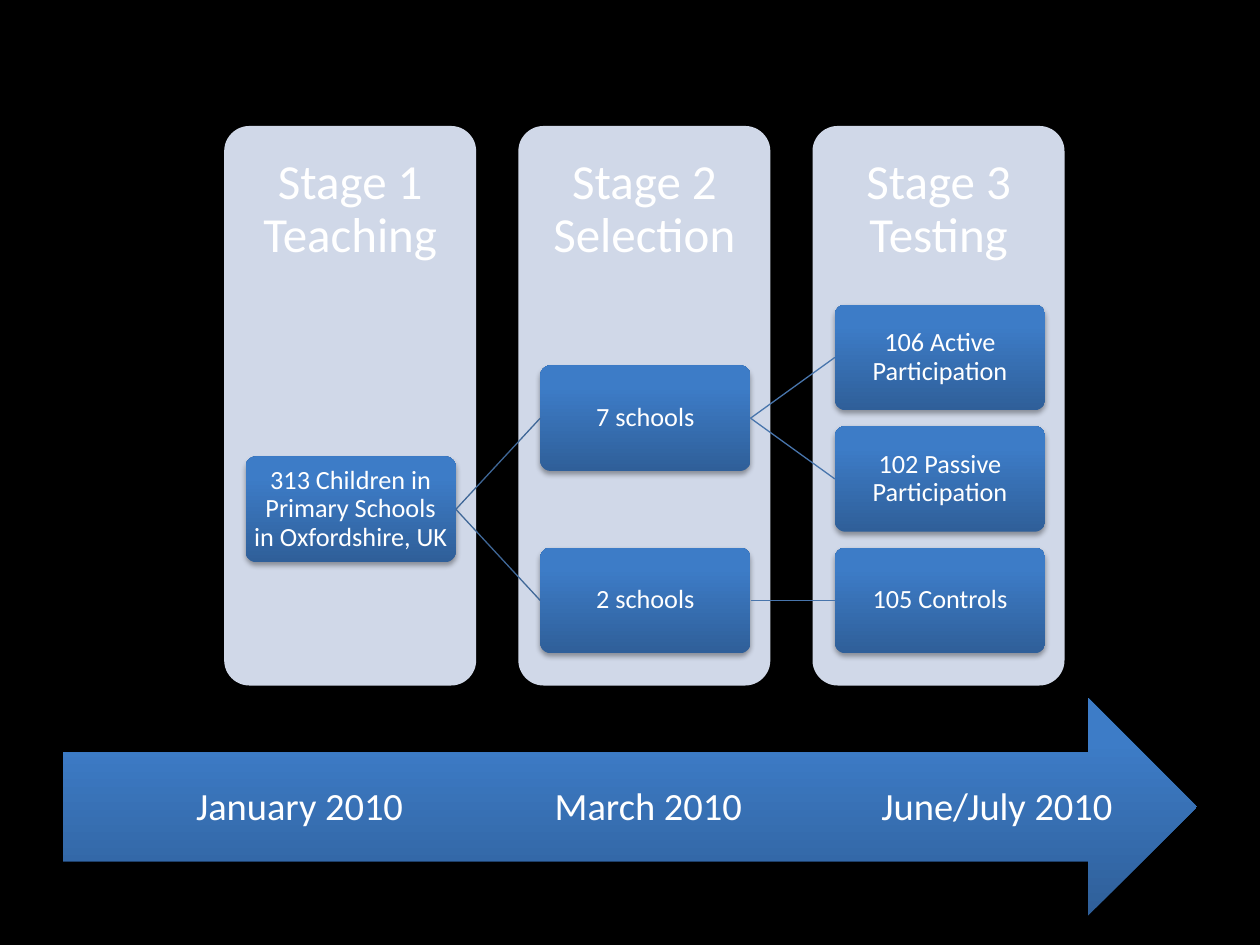
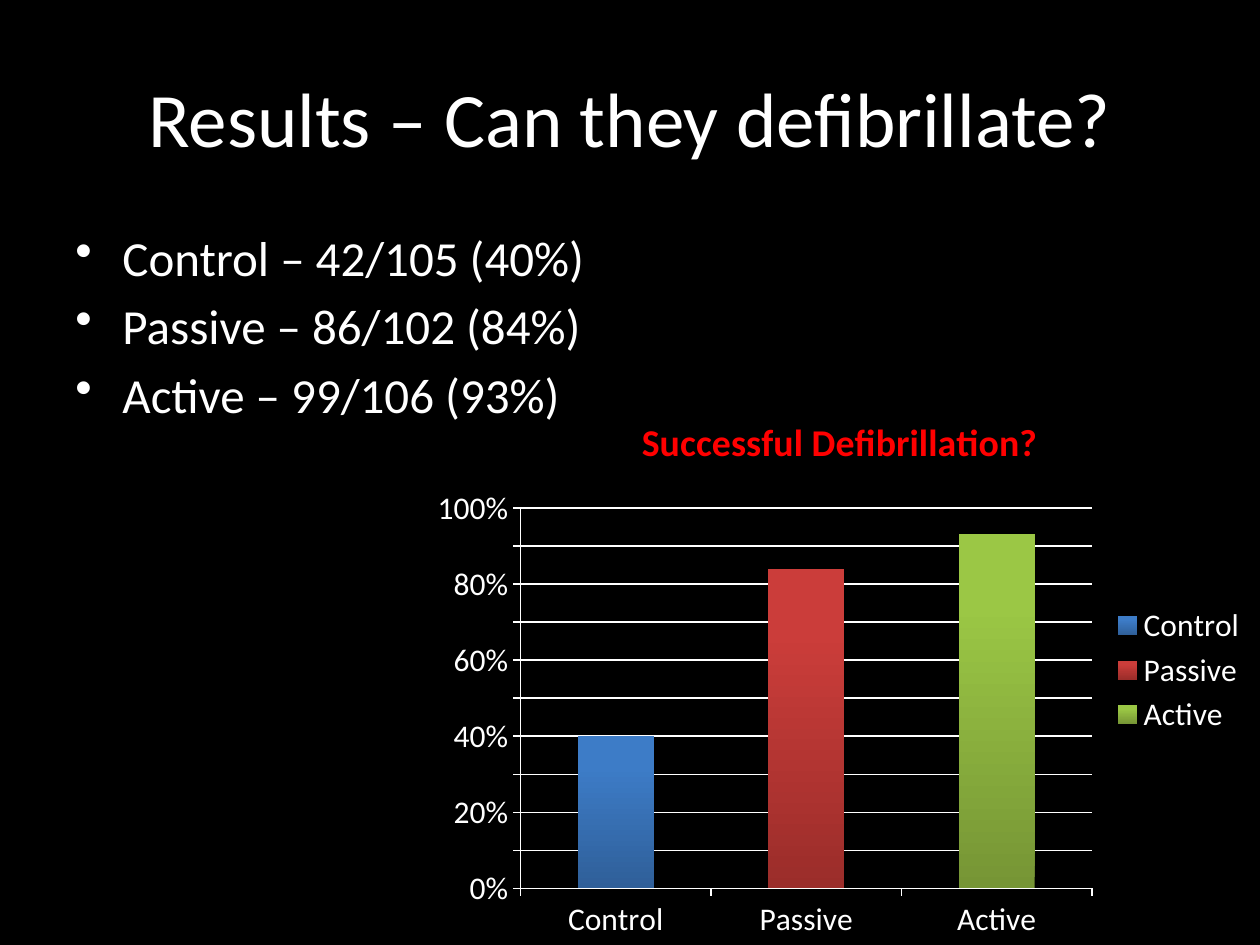
from dataclasses import dataclass

from lxml import etree
from pptx import Presentation
from pptx.chart.data import CategoryChartData
from pptx.dml.color import RGBColor
from pptx.enum import chart as charts, shapes, text
from pptx.oxml import parse_xml
from pptx.oxml import ns
from pptx.util import Cm, Pt


@dataclass(frozen=True)
class Theme:
    font: str = "Calibri"
    back: str = "000000"
    ink: str = "FFFFFF"
    panel: str = "D0D8E8"
    alert: str = "FF0000"
    links: tuple = ("3F6797", "4875AC")
    # Gradients run from the bottom colour to the top colour
    blue: tuple = ("2F5F99", "3D7CC7")
    red: tuple = ("9B2D2A", "CB3D3A")
    green: tuple = ("769535", "9BC745")
    title: float = 44
    head: float = 28
    month: float = 22
    node: float = 15
    chart: float = 18
    label: float = 21.6


T = Theme()
KIND = shapes.MSO_SHAPE
MID = text.MSO_ANCHOR.MIDDLE
TOP = text.MSO_ANCHOR.TOP
CENTRE = text.PP_ALIGN.CENTER
LEFT = text.PP_ALIGN.LEFT


def rgb(code):
    return RGBColor.from_string(code)


def box(left, top, width, height):
    return Cm(left), Cm(top), Cm(width), Cm(height)


def blend(fill, pair):
    fill.gradient()
    fill.gradient_angle = 90
    for stop, code, place in zip(fill.gradient_stops, pair, (0, 0.8)):
        stop.color.rgb = rgb(code)
        stop.position = place


def style(font, size, color=T.ink, bold=False):
    font.name, font.size, font.bold = T.font, Pt(size), bold
    font.color.rgb = rgb(color)


def write(shape, *lines, size, align=CENTRE, anchor=MID, inset=(0.25, 0.13),
          space=1.0, bullet=False):
    """Fill a shape or text box with one paragraph per line."""
    frame = shape.text_frame
    frame.word_wrap, frame.vertical_anchor = True, anchor
    frame.margin_left = frame.margin_right = Cm(inset[0])
    frame.margin_top = frame.margin_bottom = Cm(inset[1])
    for i, line in enumerate(lines):
        para = frame.add_paragraph() if i else frame.paragraphs[0]
        para.alignment, para.line_spacing = align, space
        run = para.add_run()
        run.text = line
        style(run.font, size)
        if bullet:
            para.space_before = Pt(size * 0.2)
            props = para._p.get_or_add_pPr()
            props.set("marL", str(Cm(0.95)))
            props.set("indent", str(-Cm(0.95)))
            etree.SubElement(props, ns.qn("a:buChar")).set("char", "•")


def label(slide, place, *lines, **form):
    write(slide.shapes.add_textbox(*box(*place)), *lines, **form)


def block(slide, kind, place, fill):
    """Add a shape with a plain or blended fill and a soft shadow."""
    shape = slide.shapes.add_shape(kind, *box(*place))
    if kind == KIND.ROUNDED_RECTANGLE:
        shape.adjustments[0] = 0.1
    if isinstance(fill, tuple):
        blend(shape.fill, fill)
    else:
        shape.fill.solid()
        shape.fill.fore_color.rgb = rgb(fill)
    shape.line.fill.background()
    shape.shadow.inherit = False
    shade = parse_xml(
        f'<a:outerShdw {ns.nsdecls("a")} blurRad="{Pt(3.1)}" dist="{Pt(1.8)}" '
        'dir="5400000" rotWithShape="0"><a:srgbClr val="000000">'
        '<a:alpha val="35000"/></a:srgbClr></a:outerShdw>')
    shape._element.spPr.find(ns.qn("a:effectLst")).append(shade)
    return shape


def node(slide, words, col, row):
    place = (4.95 + 5.94 * col, 6.14 + 2.45 * row, 4.24, 2.13)
    shape = block(slide, KIND.ROUNDED_RECTANGLE, place, T.blue)
    write(shape, words, size=T.node, inset=(0.1, 0.1), space=0.9)
    return shape


def link(slide, start, end, color):
    line = slide.shapes.add_connector(shapes.MSO_CONNECTOR.STRAIGHT, 0, 0, 0, 0)
    line.begin_connect(start, 3)
    line.end_connect(end, 1)
    line.line.color.rgb, line.line.width = rgb(color), Pt(0.75)
    etree.SubElement(line._element.spPr, ns.qn("a:effectLst"))


def page(deck):
    slide = deck.slides.add_slide(deck.slide_layouts[6])
    slide.background.fill.solid()
    slide.background.fill.fore_color.rgb = rgb(T.back)
    return slide


def study(deck):
    slide = page(deck)
    # Timeline
    block(slide, KIND.RIGHT_ARROW, (1.27, 14.07, 22.86, 4.39), T.blue)
    for i, month in enumerate(("January 2010", "March 2010", "June/July 2010")):
        label(slide, (3.12 + 7.03 * i, 15.19, 5.84, 2.21), month,
              size=T.month, inset=(0, 0.6), space=0.9)

    # Stage panels
    for i, stage in enumerate(("Teaching", "Selection", "Testing")):
        left = 4.52 + 5.93 * i
        block(slide, KIND.ROUNDED_RECTANGLE, (left, 2.54, 5.08, 11.28), T.panel)
        label(slide, (left, 2.54, 5.08, 3.38), f"Stage {i + 1} {stage}",
              size=T.head, inset=(0.55, 0.55), space=0.9)

    # Tree: each parent sits midway between its children
    groups = [node(slide, words, 2, row) for row, words in enumerate(
        ("106 Active Participation", "102 Passive Participation",
         "105 Controls"))]
    seven = node(slide, "7 schools", 1, 0.5)
    two = node(slide, "2 schools", 1, 2)
    root = node(slide, "313 Children in Primary Schools in Oxfordshire, UK",
                0, 1.25)
    for school in (seven, two):
        link(slide, root, school, T.links[0])
    for school, group in zip((seven, seven, two), groups):
        link(slide, school, group, T.links[1])


def bars(slide, place, title, cats, vals, fills):
    """Add a column chart with one blended colour per category."""
    data = CategoryChartData(number_format="0%")
    data.categories = cats
    data.add_series("Series 1", vals)
    chart = slide.shapes.add_chart(
        charts.XL_CHART_TYPE.COLUMN_CLUSTERED, *box(*place), data).chart
    style(chart.font, T.chart)

    chart.has_title = True
    run = chart.chart_title.text_frame.paragraphs[0].add_run()
    run.text = title
    style(run.font, T.label, T.alert, True)
    chart.has_legend = True
    chart.legend.position = charts.XL_LEGEND_POSITION.RIGHT
    chart.legend.include_in_layout = False

    axis = chart.value_axis
    axis.minimum_scale, axis.maximum_scale, axis.major_unit = 0, 1, 0.1
    axis.tick_labels.number_format = "0%"
    axis.tick_labels.number_format_is_linked = False
    axis.has_major_gridlines = True
    for line in (axis.format.line, axis.major_gridlines.format.line,
                 chart.category_axis.format.line):
        line.color.rgb, line.width = rgb(T.ink), Pt(0.75)

    plot = chart.plots[0]
    plot.gap_width, plot.vary_by_categories = 150, True
    for i, pair in enumerate(fills):
        blend(plot.series[0].points[i].format.fill, pair)

    # Fixed inner plot area, as shares of the chart
    area = chart._chartSpace.chart.plotArea
    for old in area.findall(ns.qn("c:layout")):
        area.remove(old)
    parts = {"layoutTarget": "inner", "xMode": "edge", "yMode": "edge",
             "x": 0.12, "y": 0.21, "w": 0.68, "h": 0.68}
    inner = "".join(f'<c:{k} val="{v}"/>' for k, v in parts.items())
    area.insert(0, parse_xml(
        f'<c:layout {ns.nsdecls("c")}><c:manualLayout>{inner}'
        '</c:manualLayout></c:layout>'))


def results(deck):
    slide = page(deck)
    label(slide, (1.27, 0.76, 22.86, 3.18), "Results – Can they defibrillate?",
          size=T.title)
    label(slide, (1.27, 4.45, 12.7, 4.93), "Control – 42/105 (40%)",
          "Passive – 86/102 (84%)", "Active – 99/106 (93%)",
          size=T.head, align=LEFT, anchor=TOP, bullet=True)
    bars(slide, (8.46, 7.87, 16.94, 11.28), "Successful Defibrillation?",
         ("Control", "Passive", "Active"), (0.4, 0.84, 0.93),
         (T.blue, T.red, T.green))


def main():
    deck = Presentation()
    deck.slide_width, deck.slide_height = Cm(25.4), Cm(19.05)
    study(deck)
    results(deck)
    deck.save("out.pptx")


if __name__ == "__main__":
    main()
